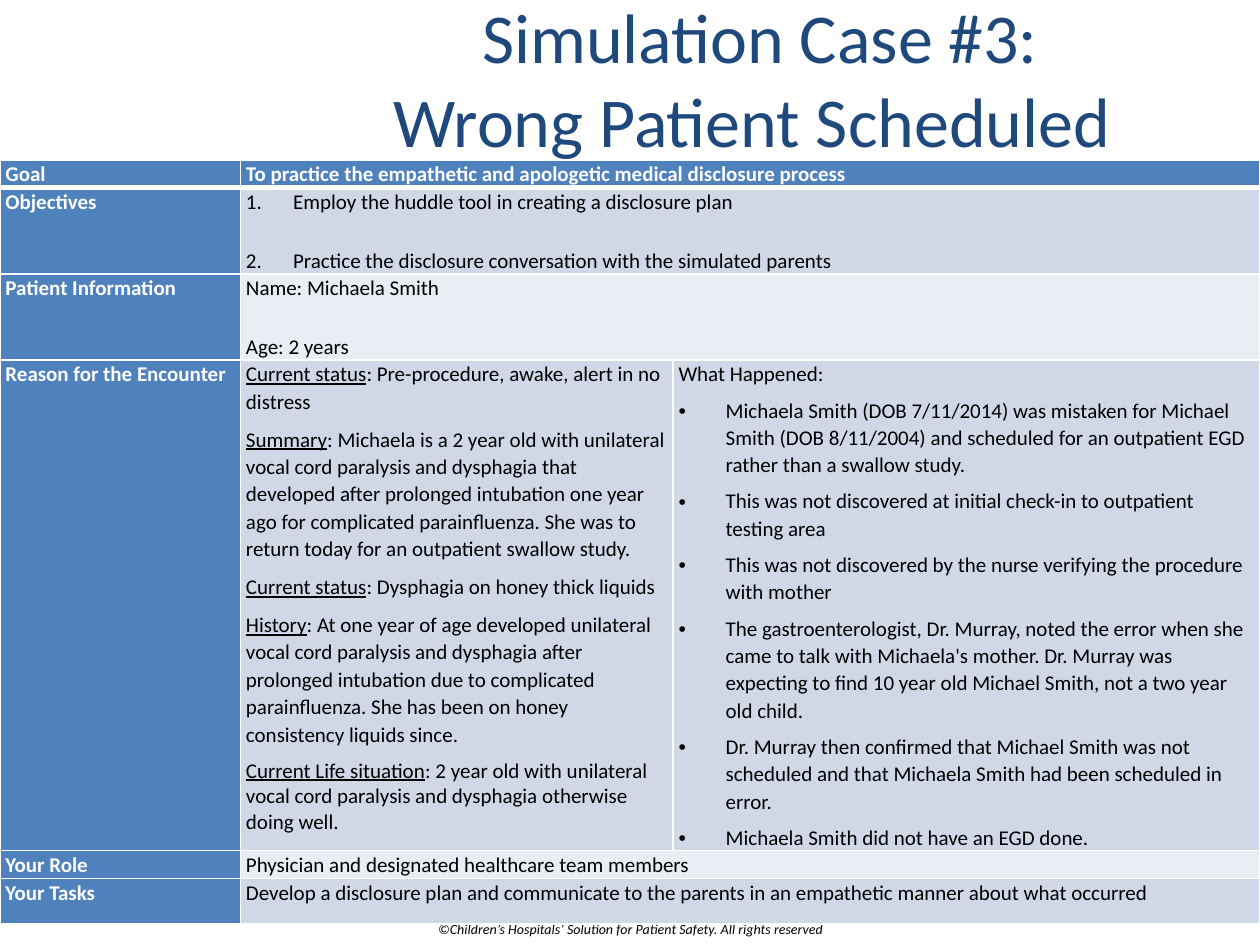
from lxml.etree import SubElement
from pptx import Presentation
from pptx.dml.color import RGBColor
from pptx.enum.text import MSO_ANCHOR, PP_ALIGN
from pptx.oxml.ns import qn
from pptx.util import Cm, Pt

NAVY = RGBColor(0x1F, 0x49, 0x7D)
BLUE = RGBColor(0x4F, 0x81, 0xBD)
MID = RGBColor(0xD0, 0xD8, 0xE8)
PALE = RGBColor(0xE9, 0xED, 0xF4)
WHITE = RGBColor(0xFF, 0xFF, 0xFF)
BLACK = RGBColor(0, 0, 0)

# Table text
GOAL = "To practice the empathetic and apologetic medical disclosure process"
AIMS = ["Employ the huddle tool in creating a disclosure plan",
        "Practice the disclosure conversation with the simulated parents"]
CHILD = ["Name: Michaela Smith", "Age: 2 years"]
STORY = [
    ("Current status", ": Pre-procedure, awake, alert in no distress"),
    ("Summary", ": Michaela is a 2 year old with unilateral vocal cord paralysis "
     "and dysphagia that developed after prolonged intubation one year ago for "
     "complicated parainfluenza. She was to return today for an outpatient "
     "swallow study."),
    ("Current status", ": Dysphagia on honey thick liquids"),
    ("History", ": At one year of age developed unilateral vocal cord paralysis "
     "and dysphagia after prolonged intubation due to complicated "
     "parainfluenza. She has been on honey consistency liquids since."),
    ("Current Life situation", ": 2 year old with unilateral vocal cord "
     "paralysis and dysphagia otherwise doing well."),
]
EVENTS = [
    "Michaela Smith (DOB 7/11/2014) was mistaken for Michael Smith (DOB "
    "8/11/2004) and scheduled for an outpatient EGD rather than a swallow study.",
    "This was not discovered at initial check-in to outpatient testing area",
    "This was not discovered by the nurse verifying the procedure with mother",
    "The gastroenterologist, Dr. Murray, noted the error when she came to talk "
    "with Michaela's mother. Dr. Murray was expecting to find 10 year old "
    "Michael Smith, not a two year old child.",
    "Dr. Murray then confirmed that Michael Smith was not scheduled and that "
    "Michaela Smith had been scheduled in error.",
    "Michaela Smith did not have an EGD done.",
]
ROLE = "Physician and designated healthcare team members"
TASK = ("Develop a disclosure plan and communicate to the parents in an "
        "empathetic manner about what occurred")
# Label, lines, fill and height of each row
ROWS = [("Goal", [GOAL], BLUE, 0.55),
        ("Objectives", AIMS, MID, 1.74),
        ("Patient Information", CHILD, PALE, 1.74),
        ("Reason for the Encounter", None, MID, 9.89),
        ("Your Role", [ROLE], PALE, 0.56),
        ("Your Tasks", [TASK], MID, 0.92)]
COLS = [4.85, 8.72, 11.83]


class Deck:
    font = "Calibri"
    size = 12

    def __init__(self):
        self.prs = Presentation()
        self.prs.slide_width, self.prs.slide_height = Cm(25.4), Cm(19.05)
        self.slide = self.prs.slides.add_slide(self.prs.slide_layouts[6])

    def run(self, par, text, color, size=None, **style):
        run = par.add_run()
        run.text = text
        font = run.font
        font.name, font.size = self.font, Pt(size or self.size)
        font.color.rgb = color
        for name, value in style.items():
            setattr(font, name, value)

    def text(self, box, words, color, size, align, **style):
        frame = self.slide.shapes.add_textbox(*map(Cm, box)).text_frame
        frame.word_wrap = True
        frame.vertical_anchor = MSO_ANCHOR.MIDDLE
        par = frame.paragraphs[0]
        par.alignment = align
        self.run(par, words, color, size, **style)

    def par(self, cell, before=6, after=12, line=1.07, mark=None):
        """Start a paragraph; the first one has no space before."""
        frame = cell.text_frame
        first = not frame.paragraphs[0].runs
        par = frame.paragraphs[0] if first else frame.add_paragraph()
        if mark:
            props = par._p.get_or_add_pPr()
            props.set("marL", str(Cm(0.95)))
            props.set("indent", str(-Cm(0.95)))
            tag, key = mark
            SubElement(props, qn("a:buFont"), typeface="Arial" if key == "•" else "+mj-lt")
            name = "char" if tag == "a:buChar" else "type"
            SubElement(props, qn(tag), {name: key})
        par.line_spacing = line
        par.space_before = Pt(0 if first else before)
        par.space_after = Pt(after)
        return par

    def cell(self, cell, fill, top, low):
        cell.margin_left = cell.margin_right = Cm(0.11)
        cell.margin_top = cell.margin_bottom = 0
        cell.fill.solid()
        cell.fill.fore_color.rgb = fill
        props = cell._tc.get_or_add_tcPr()
        for spot, (side, width) in enumerate(zip("LRTB", (1, 1, top, low))):
            edge = SubElement(props, qn("a:ln" + side), w=str(Pt(width)))
            paint = SubElement(edge, qn("a:solidFill"))
            SubElement(paint, qn("a:srgbClr"), val=str(WHITE))
            props.insert(spot, edge)

    def table(self, left, top):
        tall = sum(row[-1] for row in ROWS)
        table = self.slide.shapes.add_table(
            len(ROWS), len(COLS), Cm(left), Cm(top), Cm(sum(COLS)), Cm(tall)).table
        for col, width in zip(table.columns, COLS):
            col.width = Cm(width)
        for i, (label, lines, fill, high) in enumerate(ROWS):
            table.rows[i].height = Cm(high)
            for j in range(len(COLS)):
                self.cell(table.cell(i, j), fill if j else BLUE,
                          3 if i == 1 else 1, 3 if i == 0 else 1)
            self.run(self.par(table.cell(i, 0)), label, WHITE, bold=True)
            if not lines:
                self.story(table.cell(i, 1))
                self.events(table.cell(i, 2))
                continue
            table.cell(i, 1).merge(table.cell(i, 2))
            mark = ("a:buAutoNum", "arabicPeriod") if lines is AIMS else None
            for line in lines:
                par = self.par(table.cell(i, 1), mark=mark)
                self.run(par, line, BLACK if i else WHITE, bold=i == 0)

    def story(self, cell):
        for head, body in STORY:
            last = head == STORY[-1][0]
            par = self.par(cell, 0, 6, 1.0 if last else 1.07)
            self.run(par, head, BLACK, bold=False, underline=True)
            self.run(par, body, BLACK, bold=False)

    def events(self, cell):
        self.run(self.par(cell, after=2), "What Happened:", BLACK, bold=False)
        for event in EVENTS:
            par = self.par(cell, 3, 2, mark=("a:buChar", "•"))
            self.run(par, event, BLACK, bold=False)


def main():
    deck = Deck()
    # Footer
    deck.text((8.53, 18.42, 8.33, 0.6),
              "©Children’s Hospitals’ Solution for Patient Safety. All rights reserved",
              BLACK, 8, PP_ALIGN.RIGHT, italic=True)
    # Title
    deck.text((7.47, -0.03, 15.7, 3.18),
              "Simulation Case #3: Wrong Patient Scheduled ",
              NAVY, 40, PP_ALIGN.CENTER)
    # Case table
    deck.table(0, 3.23)
    deck.prs.save("out.pptx")


if __name__ == "__main__":
    main()
